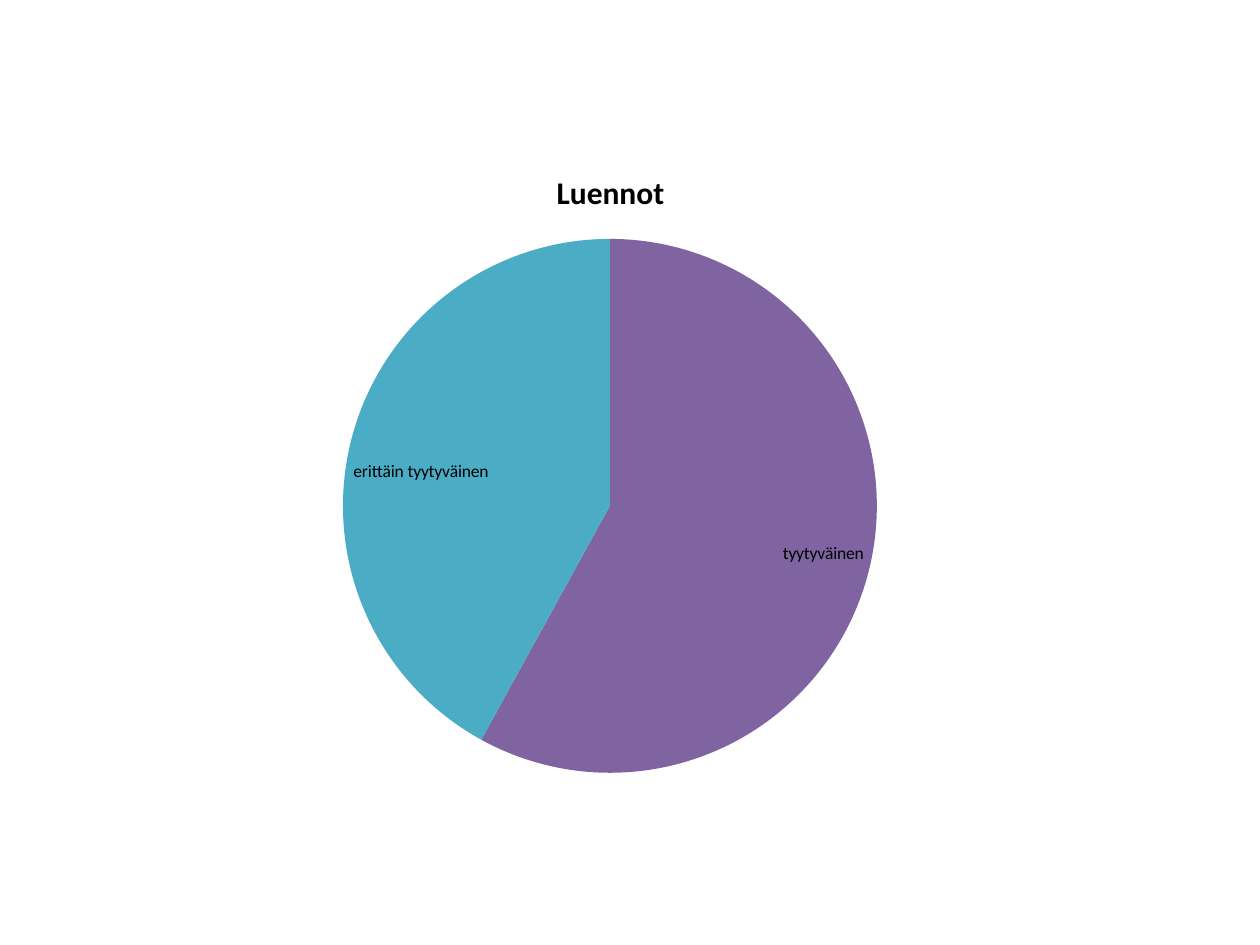
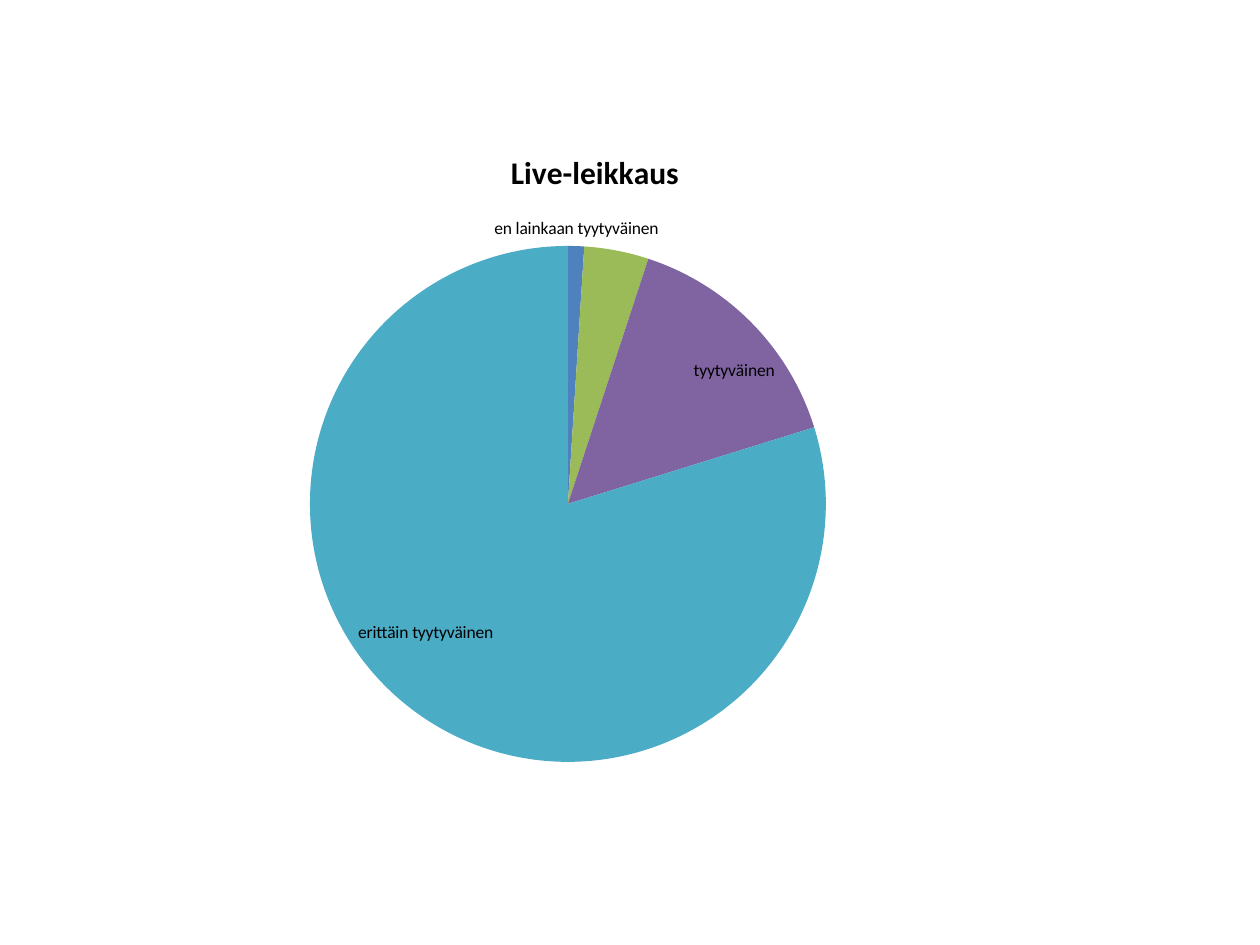
from lxml import etree
from pptx import Presentation
from pptx.chart.data import CategoryChartData
from pptx.dml.color import RGBColor
from pptx.enum.chart import XL_CHART_TYPE, XL_LABEL_POSITION
from pptx.oxml.ns import qn
from pptx.util import Pt

PIE = XL_CHART_TYPE.PIE
BEST_FIT = XL_LABEL_POSITION.BEST_FIT

EMU_PER_INCH = 914400
PX_PER_INCH = 126
SLIDE_SIZE = (1260, 945)
BLANK_LAYOUT = 6

TEXT_COLOR = "000000"
RATING_COLORS = ("4F81BD", "C0504D", "9BBB59", "8064A2", "4BACC6")
LABEL_FONT = {"name": "Calibri", "size": Pt(10), "bold": False}
TITLE_FONT = {"name": "Calibri", "size": Pt(18), "bold": True}
LABEL_FORMAT = {
    "show_category_name": True,
    "show_value": False,
    "show_percentage": False,
    "show_legend_key": False,
    "position": BEST_FIT,
}

SURVEYS = (
    {
        "title": "Luennot",
        "frame": (134, 145, 953, 645),
        "pie": (343, 239, 534),
        "ratings": ("", "", "", "tyytyväinen", "erittäin tyytyväinen"),
        "shares": (None, None, None, 58, 42),
    },
    {
        "title": "Live-leikkaus",
        "frame": (84, 125, 1022, 655),
        "pie": (310, 246, 516),
        "ratings": ("en lainkaan tyytyväinen", "", "", "tyytyväinen",
                    "erittäin tyytyväinen"),
        "shares": (1, None, 4, 15, 79),
    },
)


def px(length):
    return round(length * EMU_PER_INCH / PX_PER_INCH)


def color(code):
    return RGBColor.from_string(code)


def apply_format(target, values):
    for attribute, value in values.items():
        setattr(target, attribute, value)


def format_font(font, values):
    apply_format(font, values)
    font.color.rgb = color(TEXT_COLOR)


def place_pie(chart, frame, pie):
    left, top, width, height = frame
    pie_left, pie_top, diameter = pie
    fractions = {
        "x": (pie_left - left) / width,
        "y": (pie_top - top) / height,
        "w": diameter / width,
        "h": diameter / height,
    }
    plot_area = chart.plots[0]._element.getparent()
    for old_layout in plot_area.findall(qn("c:layout")):
        plot_area.remove(old_layout)
    layout = etree.Element(qn("c:layout"))
    plot_area.insert(0, layout)
    manual = etree.SubElement(layout, qn("c:manualLayout"))
    settings = {"layoutTarget": "inner", "xMode": "edge", "yMode": "edge"}
    settings.update({key: f"{part:.4f}" for key, part in fractions.items()})
    for tag, value in settings.items():
        etree.SubElement(manual, qn(f"c:{tag}")).set("val", value)


def add_chart_title(chart, title):
    chart.has_title = True
    chart.chart_title.include_in_layout = False
    heading = chart.chart_title.text_frame
    heading.text = title
    format_font(heading.paragraphs[0].runs[0].font, TITLE_FONT)


def format_slices(plot):
    plot.vary_by_categories = True
    for index, code in enumerate(RATING_COLORS):
        rating = plot.series[0].points[index].format
        rating.fill.solid()
        rating.fill.fore_color.rgb = color(code)
        rating.line.fill.background()
    labels = plot.series[0].data_labels
    apply_format(labels, LABEL_FORMAT)
    format_font(labels.font, LABEL_FONT)


def add_survey_pie(slide, survey):
    answers = CategoryChartData()
    answers.categories = survey["ratings"]
    answers.add_series("Series 1", survey["shares"])
    frame = survey["frame"]
    chart = slide.shapes.add_chart(PIE, *map(px, frame), answers).chart
    chart.has_legend = False
    format_font(chart.font, LABEL_FONT)
    add_chart_title(chart, survey["title"])
    format_slices(chart.plots[0])
    place_pie(chart, frame, survey["pie"])


def main():
    deck = Presentation()
    deck.slide_width, deck.slide_height = map(px, SLIDE_SIZE)
    for survey in SURVEYS:
        slide = deck.slides.add_slide(deck.slide_layouts[BLANK_LAYOUT])
        add_survey_pie(slide, survey)
    deck.save("out.pptx")


if __name__ == "__main__":
    main()
